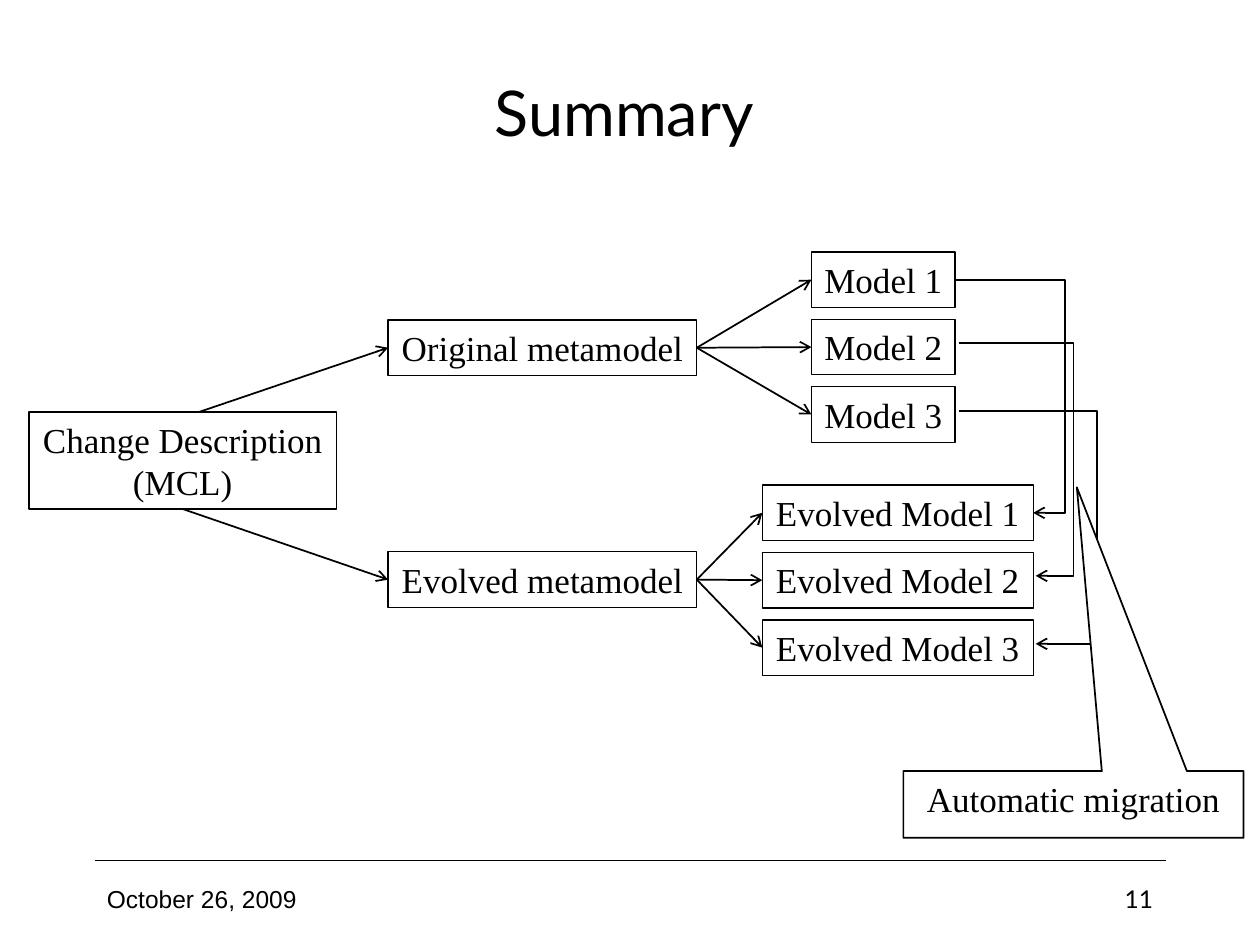
import pptx
import pptx.util
import pptx.dml.color
import pptx.enum.shapes
import pptx.enum.text
import pptx.oxml.ns
from lxml import etree

Inches, Pt = pptx.util.Inches, pptx.util.Pt
SHAPE = pptx.enum.shapes.MSO_SHAPE
LINE = pptx.enum.shapes.MSO_CONNECTOR
ALIGN = pptx.enum.text.PP_ALIGN
ANCHOR = pptx.enum.text.MSO_ANCHOR
qn = pptx.oxml.ns.qn
rgb = pptx.dml.color.RGBColor.from_string
BLACK, WHITE = "000000", "FFFFFF"


def write(sp, text, size, font, align, anchor, wrap=True):
    tf = sp.text_frame
    tf.word_wrap = wrap
    tf.vertical_anchor = anchor
    p = tf.paragraphs[0]
    p.alignment = align
    r = p.add_run()
    r.text = text
    r.font.size = Pt(size)
    r.font.name = font
    r.font.color.rgb = rgb(BLACK)


def connect(kind, x1, y1, x2, y2, arrow=True):
    c = s.shapes.add_connector(kind, Inches(x1), Inches(y1), Inches(x2), Inches(y2))
    c.line.color.rgb = rgb(BLACK)
    c.line.width = Pt(1)
    if arrow:
        etree.SubElement(c.line._get_or_add_ln(), qn("a:tailEnd"), type="arrow")
    etree.SubElement(c._element.spPr, qn("a:effectLst"))
    return c


prs = pptx.Presentation()
prs.slide_width, prs.slide_height = Inches(10), Inches(7.5)
s = prs.slides.add_slide(prs.slide_layouts[5])

# Title and footer
title = s.shapes.title
title.left, title.top = Inches(1.58), Inches(0.42)
title.width, title.height = Inches(6.75), Inches(0.92)
write(title, "Summary", 36, "Lato", ALIGN.CENTER, ANCHOR.MIDDLE)

connect(LINE.STRAIGHT, 0.75, 6.83, 9.25, 6.83, arrow=False)
for x, text, font, align in [
    (0.75, "October 26, 2009", "Arial", ALIGN.LEFT),
    (7.17, "11", "Lato", ALIGN.RIGHT),
]:
    sp = s.shapes.add_textbox(Inches(x), Inches(6.92), Inches(2.08), Inches(0.42))
    write(sp, text, 14, font, align, ANCHOR.MIDDLE)

# Boxes: text, left, top, width, height
ROW = 0.535
boxes = [
    ("Original metamodel", 3.08, 2.54, 2.45, 0.44),
    ("Evolved metamodel", 3.08, 4.38, 2.45, 0.44),
    ("Change Description (MCL)", 0.23, 3.27, 2.44, 0.77),
]
for i in range(3):
    boxes.append((f"Model {i + 1}", 6.44, 2 + i * ROW, 1.14, 0.44))
    boxes.append((f"Evolved Model {i + 1}", 6.05, 3.85 + i * ROW, 2.15, 0.44))

for text, x, y, w, h in boxes:
    sp = s.shapes.add_shape(SHAPE.RECTANGLE, Inches(x), Inches(y), Inches(w), Inches(h))
    sp.shadow.inherit = False
    sp.fill.background()
    sp.line.color.rgb = rgb(BLACK)
    sp.line.width = Pt(0.75)
    write(sp, text, 20, "Times New Roman", ALIGN.CENTER, ANCHOR.TOP, wrap="(MCL)" in text)

# Migration from each model to its evolved model, bending at bend_x
for x, y, bend_x in [(7.59, 2.22, 8.45), (7.61, 2.72, 8.52), (7.61, 3.26, 8.71)]:
    c = connect(LINE.ELBOW, x, y, x + 0.61, y + 1.85)
    guides = c._element.spPr.find(qn("a:prstGeom")).get_or_add_avLst()
    bend = round((bend_x - x) / 0.61 * 100000)
    etree.SubElement(guides, qn("a:gd"), name="adj1", fmla=f"val {bend}")

callout = s.shapes.add_shape(
    SHAPE.RECTANGULAR_CALLOUT, Inches(7.17), Inches(6.12), Inches(2.7), Inches(0.53))
callout.adjustments[0] = 0.01
callout.adjustments[1] = -4.75
callout.shadow.inherit = False
callout.fill.solid()
callout.fill.fore_color.rgb = rgb(WHITE)
callout.line.color.rgb = rgb(BLACK)
callout.line.width = Pt(1)
write(callout, "Automatic migration", 20, "Times New Roman", ALIGN.CENTER, ANCHOR.TOP, wrap=False)

# Arrows from the change description and from each metamodel to its models
connect(LINE.STRAIGHT, 1.58, 3.27, 3.08, 2.76)
connect(LINE.STRAIGHT, 1.45, 4.04, 3.08, 4.6)
for y, model_x, model_y in [(2.76, 6.44, 2.22), (4.6, 6.05, 4.07)]:
    for i in range(3):
        connect(LINE.STRAIGHT, 5.53, y, model_x, model_y + i * ROW)

prs.save("out.pptx")
